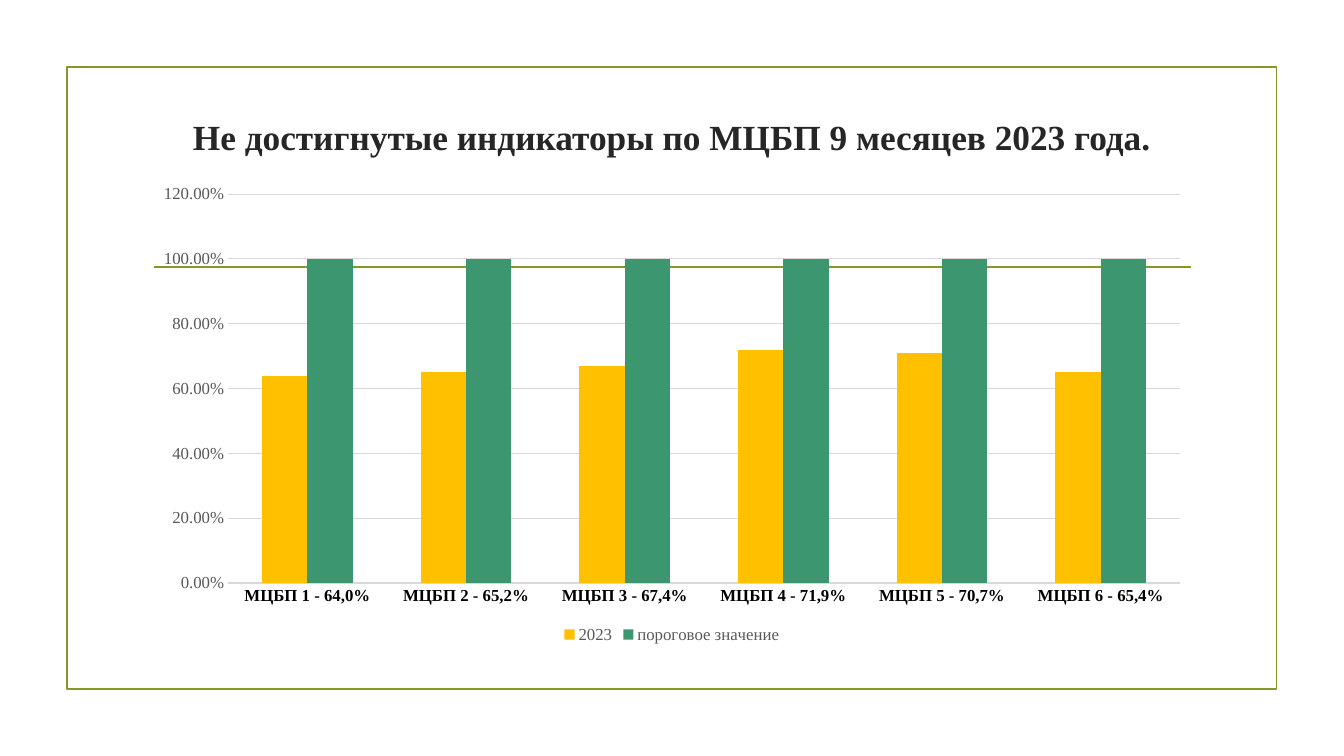
"""Build the slide with a chart of indicators below their target."""
from lxml.etree import SubElement
from pptx import Presentation
from pptx.chart.data import CategoryChartData as ChartData
from pptx.dml.color import RGBColor
from pptx.enum.chart import XL_CHART_TYPE as Kind
from pptx.enum.chart import XL_LEGEND_POSITION as Spot
from pptx.enum.chart import XL_TICK_MARK as Tick
from pptx.enum.shapes import MSO_CONNECTOR as Link
from pptx.enum.shapes import MSO_SHAPE as Shape
from pptx.enum.text import MSO_ANCHOR as Anchor
from pptx.enum.text import PP_ALIGN as Align
from pptx.oxml.ns import qn
from pptx.util import Inches, Pt

OLIVE = RGBColor(0x83, 0x99, 0x2A)
DARK = RGBColor(0x26, 0x26, 0x26)
BLACK = RGBColor(0, 0, 0)
GRAY = RGBColor(0x59, 0x59, 0x59)
PALE = RGBColor(0xD9, 0xD9, 0xD9)
GOLD = RGBColor(0xFF, 0xC0, 0x00)
GREEN = RGBColor(0x3C, 0x97, 0x70)
FACE = "Times New Roman"
WIDE, HIGH = Inches(13.33), Inches(7.5)
TITLE = "Не достигнутые индикаторы по МЦБП 9 месяцев 2023 года."
RATES = [64.0, 65.2, 67.4, 71.9, 70.7, 65.4]


def place(left, top, width, height):
    """Turn percent shares of the slide into lengths."""
    return [int(side * share / 100) for side, share in
            zip((WIDE, HIGH, WIDE, HIGH), (left, top, width, height))]


def style(font, size, color, bold=False):
    """Set face, size, colour and weight of a font."""
    font.name, font.size, font.bold = FACE, Pt(size), bold
    font.color.rgb = color


def stroke(line, color, width):
    """Set colour and width of a line."""
    line.color.rgb, line.width = color, Pt(width)


def add_frame(slide, box):
    """Draw the outlined border."""
    frame = slide.shapes.add_shape(Shape.RECTANGLE, *box)
    frame.shadow.inherit = False
    frame.fill.background()
    stroke(frame.line, OLIVE, 1.25)


def add_rule(slide, box):
    """Draw a straight line across a box."""
    left, top, width, height = box
    rule = slide.shapes.add_connector(
        Link.STRAIGHT, left, top, left + width, top + height)
    stroke(rule.line, OLIVE, 1.25)
    SubElement(rule._element.spPr, qn("a:effectLst"))


def add_title(slide, box, text):
    """Write the centred heading."""
    frame = slide.shapes.add_textbox(*box).text_frame
    frame.word_wrap = True
    frame.vertical_anchor = Anchor.MIDDLE
    frame.text = text
    para = frame.paragraphs[0]
    para.alignment = Align.CENTER
    style(para.runs[0].font, 25.2, DARK, True)


def style_axis(axis, color, bold=False):
    """Strip an axis to its labels."""
    axis.major_tick_mark = axis.minor_tick_mark = Tick.NONE
    axis.format.line.fill.background()
    style(axis.tick_labels.font, 12, color, bold)


def add_bars(slide, box, rates):
    """Plot the rates beside the target value."""
    data = ChartData(number_format="0.00%")
    data.categories = [f"МЦБП {num} - {rate:.1f}%".replace(".", ",")
                       for num, rate in enumerate(rates, 1)]
    data.add_series("2023", [round(rate / 100, 2) for rate in rates])
    data.add_series("пороговое значение", [1] * len(rates))
    chart = slide.shapes.add_chart(Kind.COLUMN_CLUSTERED, *box, data).chart
    style(chart.font, 10, BLACK)
    chart.has_title = False
    chart.has_legend = True
    chart.legend.position = Spot.BOTTOM
    chart.legend.include_in_layout = False
    style(chart.legend.font, 12, GRAY)
    plot = chart.plots[0]
    plot.gap_width, plot.overlap = 150, 0
    plot.vary_by_categories = False
    for bars, color in zip(plot.series, (GOLD, GREEN)):
        bars.format.fill.solid()
        bars.format.fill.fore_color.rgb = color
    style_axis(chart.category_axis, BLACK, True)
    scale = chart.value_axis
    style_axis(scale, GRAY)
    scale.minimum_scale, scale.maximum_scale, scale.major_unit = 0, 1.2, 0.2
    scale.tick_labels.number_format = "0.00%"
    scale.tick_labels.number_format_is_linked = False
    stroke(scale.major_gridlines.format.line, PALE, 0.75)


def main():
    """Build and save the slide."""
    deck = Presentation()
    deck.slide_width, deck.slide_height = WIDE, HIGH
    slide = deck.slides.add_slide(deck.slide_layouts[6])
    add_frame(slide, place(4.98, 8.9, 90, 82.3))
    add_rule(slide, place(11.48, 35.33, 77.15, 0))
    add_title(slide, place(10.62, 11.5, 78.75, 13.1), TITLE)
    add_bars(slide, place(10.62, 23.25, 78.75, 62.4), RATES)
    deck.save("out.pptx")


if __name__ == "__main__":
    main()
